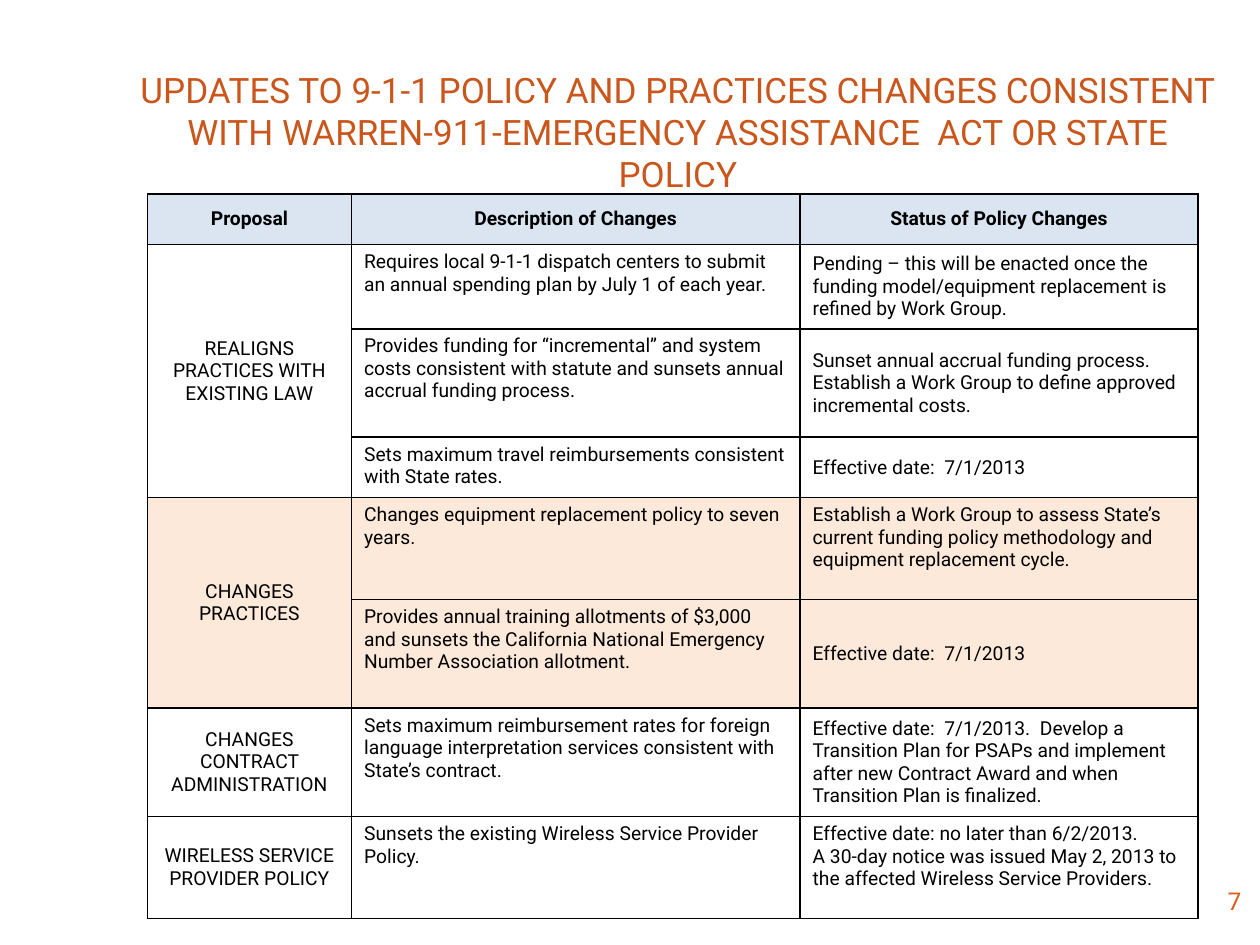
from lxml import etree
from pptx import Presentation
from pptx.dml.color import RGBColor
from pptx.enum.text import MSO_ANCHOR, PP_ALIGN
from pptx.oxml.ns import qn
from pptx.util import Inches, Pt

CENTER, LEFT, RIGHT = PP_ALIGN.CENTER, PP_ALIGN.LEFT, PP_ALIGN.RIGHT
TOP, MIDDLE = MSO_ANCHOR.TOP, MSO_ANCHOR.MIDDLE

FONT = "Roboto"
TITLE_ORANGE = RGBColor(0xCA, 0x56, 0x1C)
NUMBER_ORANGE = RGBColor(0xDB, 0x5C, 0x1E)
BLACK = RGBColor(0, 0, 0)
HEADER_BLUE = RGBColor(0xDB, 0xE5, 0xF1)
PEACH = RGBColor(0xFD, 0xE9, 0xD9)

TITLE = ("UPDATES TO 9-1-1 POLICY AND PRACTICES CHANGES CONSISTENT "
         "WITH WARREN-911-EMERGENCY ASSISTANCE  ACT OR STATE POLICY")
HEADINGS = ["Proposal", "Description of Changes", "Status of Policy Changes"]
COLUMN_WIDTHS = [1.62, 3.56, 3.16]
ROW_HEIGHTS = [0.4, 0.67, 0.86, 0.48, 0.81, 0.86, 0.86, 0.81]

# Each proposal: name, row fill, then (description, status, status anchor) rows
PROPOSALS = [
    ("REALIGNS PRACTICES WITH EXISTING LAW", None, [
        ("Requires local 9-1-1 dispatch centers to submit an annual spending "
         "plan by July 1 of each year.",
         "Pending – this will be enacted once the funding model/equipment "
         "replacement is refined by Work Group.", MIDDLE),
        ("Provides funding for “incremental” and system costs consistent with "
         "statute and sunsets annual accrual funding process.",
         "Sunset annual accrual funding process. Establish a Work Group to "
         "define approved incremental costs.", MIDDLE),
        ("Sets maximum travel reimbursements consistent with State rates.",
         "Effective date:  7/1/2013", MIDDLE),
    ]),
    ("CHANGES PRACTICES", PEACH, [
        ("Changes equipment replacement policy to seven years.",
         "Establish a Work Group to assess State’s current funding policy "
         "methodology and equipment replacement cycle.", TOP),
        ("Provides annual training allotments of $3,000 and sunsets the "
         "California National Emergency Number Association allotment.",
         "Effective date:  7/1/2013", MIDDLE),
    ]),
    ("CHANGES CONTRACT ADMINISTRATION", None, [
        ("Sets maximum reimbursement rates for foreign language "
         "interpretation services consistent with State’s contract.",
         "Effective date:  7/1/2013.  Develop a Transition Plan for PSAPs and "
         "implement after new Contract Award and when Transition Plan is "
         "finalized.", MIDDLE),
    ]),
    ("WIRELESS SERVICE PROVIDER POLICY", None, [
        ("Sunsets the existing Wireless Service Provider Policy.",
         "Effective date: no later than 6/2/2013.\n"
         "A 30-day notice was issued May 2, 2013 to the affected Wireless "
         "Service Providers.", TOP),
    ]),
]


def write(frame, text, size, color, align, bold=False):
    """Fill a text frame, one paragraph per line of text."""
    frame.word_wrap = True
    for index, line in enumerate(text.split("\n")):
        paragraph = frame.add_paragraph() if index else frame.paragraphs[0]
        paragraph.alignment = align
        run = paragraph.add_run()
        run.text = line
        run.font.name = FONT
        run.font.size = Pt(size)
        run.font.bold = bold
        run.font.color.rgb = color


def add_label(slide, box, text, size, color, align, anchor):
    frame = slide.shapes.add_textbox(*map(Inches, box)).text_frame
    frame.vertical_anchor = anchor
    write(frame, text, size, color, align)


def add_borders(cell):
    properties = cell._tc.get_or_add_tcPr()
    for side in ("a:lnL", "a:lnR", "a:lnT", "a:lnB"):
        line = etree.SubElement(properties, qn(side), w=str(Pt(1)))
        fill = etree.SubElement(line, qn("a:solidFill"))
        etree.SubElement(fill, qn("a:srgbClr"), val=str(BLACK))


def fill_cell(cell, text, align, anchor, bold=False):
    cell.vertical_anchor = anchor
    write(cell.text_frame, text, 11, BLACK, align, bold)


def style_row(table, row, color):
    for column in range(len(COLUMN_WIDTHS)):
        cell = table.cell(row, column)
        add_borders(cell)
        if color is None:
            cell.fill.background()
        else:
            cell.fill.solid()
            cell.fill.fore_color.rgb = color


def add_policy_table(slide, box):
    table = slide.shapes.add_table(
        len(ROW_HEIGHTS), len(COLUMN_WIDTHS), *map(Inches, box)).table
    for column, width in zip(table.columns, COLUMN_WIDTHS):
        column.width = Inches(width)
    for row, height in zip(table.rows, ROW_HEIGHTS):
        row.height = Inches(height)

    # Header row
    style_row(table, 0, HEADER_BLUE)
    for column, heading in enumerate(HEADINGS):
        fill_cell(table.cell(0, column), heading, CENTER, MIDDLE, bold=True)

    # Proposals, each spanning its own rows
    first = 1
    for proposal, color, changes in PROPOSALS:
        for row, (description, status, anchor) in enumerate(changes, first):
            style_row(table, row, color)
            fill_cell(table.cell(row, 1), description, LEFT, TOP)
            fill_cell(table.cell(row, 2), status, LEFT, anchor)
        name_cell = table.cell(first, 0)
        if len(changes) > 1:
            name_cell.merge(table.cell(first + len(changes) - 1, 0))
        fill_cell(name_cell, proposal, CENTER, MIDDLE)
        first += len(changes)


def main():
    deck = Presentation()
    deck.slide_width, deck.slide_height = Inches(10), Inches(7.5)
    slide = deck.slides.add_slide(deck.slide_layouts[6])
    add_label(slide, (0.92, 0.58, 8.92, 0.92), TITLE, 20, TITLE_ORANGE,
              CENTER, MIDDLE)
    add_policy_table(slide, (1.17, 1.54, 8.34, 5.75))
    # Slide number
    add_label(slide, (7.5, 6.98, 2.45, 0.52), "7", 14, NUMBER_ORANGE,
              RIGHT, TOP)
    deck.save("out.pptx")


if __name__ == "__main__":
    main()
